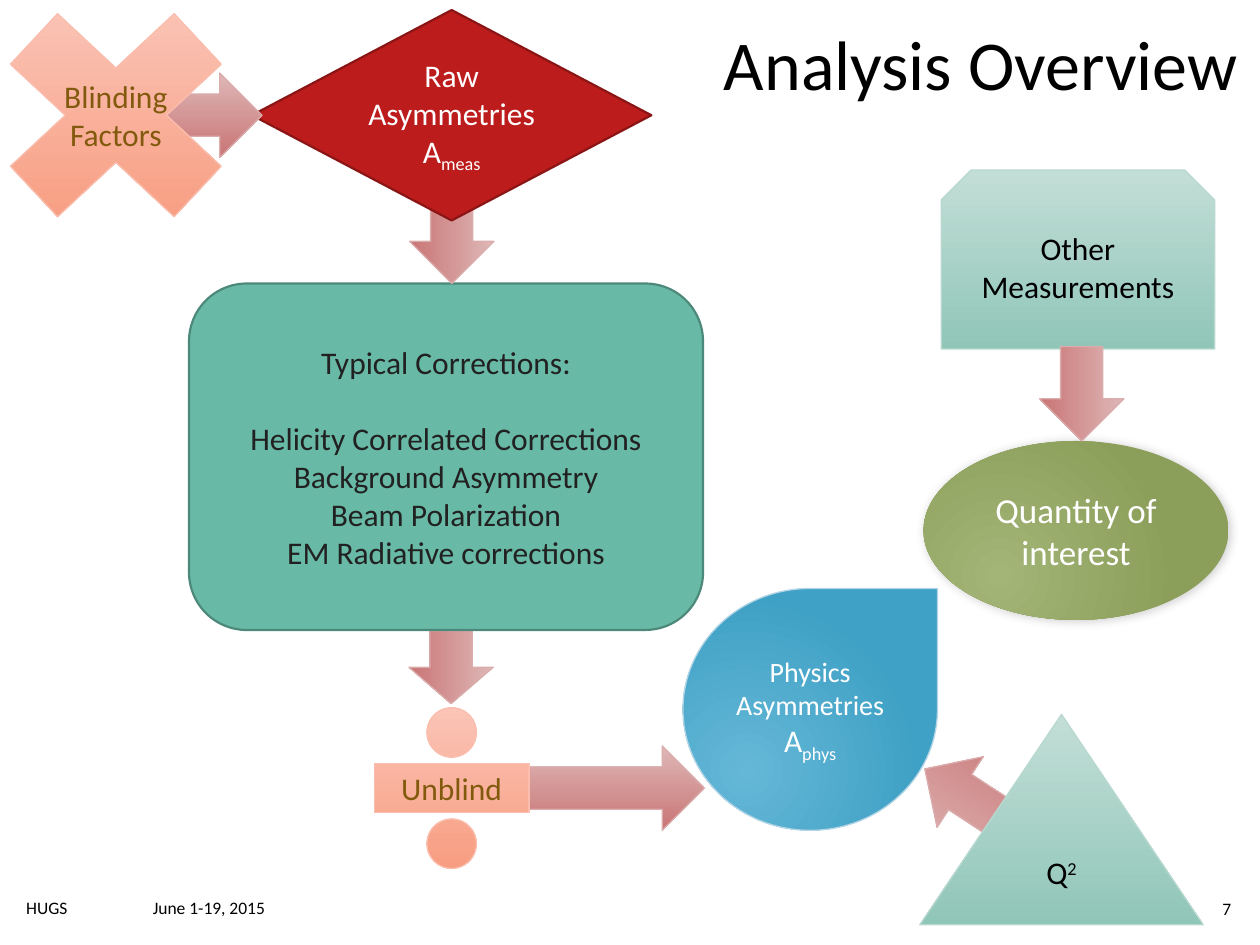
from pptx import Presentation
from pptx.dml.color import RGBColor
from pptx.enum.shapes import MSO_SHAPE as Shape
from pptx.enum.text import MSO_ANCHOR as Anchor, PP_ALIGN as Align
from pptx.oxml import parse_xml
from pptx.oxml.ns import nsdecls, qn
from pptx.util import Inches, Pt


def rgb(value):
    return RGBColor.from_string(value)


def write(box, paras, size, color, align=Align.CENTER):
    """Each paragraph is a list of (text, size or None, baseline) runs."""
    frame = box.text_frame
    frame.word_wrap = True
    frame.vertical_anchor = Anchor.MIDDLE
    for i, runs in enumerate(paras):
        para = frame.paragraphs[0] if i == 0 else frame.add_paragraph()
        para.alignment = align
        for text, own_size, baseline in runs:
            span = para.add_run()
            span.text = text
            span.font.name = "Calibri"
            span.font.size = Pt(own_size or size)
            span.font.color.rgb = rgb(color)
            if baseline:
                span.font._element.set("baseline", str(baseline * 1000))


deck = Presentation()
deck.slide_width, deck.slide_height = Inches(10), Inches(7.5)
page = deck.slides.add_slide(deck.slide_layouts[5])

# Looks: fill colours (two make a gradient), line colour, line width, text colour
ARROW = (["DFB7B7", "C97575"], "DAACAC", 0.75, "000000")
BLIND = (["FBCABE", "F79779"], "FABDAE", 0.75, "825A0E")
INPUT = (["C3DED7", "90C6B8"], "B9D9D0", 0.75, "000000")
RAW = (["BC1C1C"], "8B1515", 1.25, "FFFFFF")
CORRECTIONS = (["68B9A6"], "4D897B", 1.25, "212121")
PHYSICS = (["65B7D7", "3FA1C5"], "B3D5E6", 0.75, "FFFFFF")
QUANTITY = (["A3B577", "8B9E5A"], None, 0, "FFFFFF")
RADIAL = (QUANTITY, PHYSICS)

corrections = ["Typical Corrections:", "Helicity Correlated Corrections",
               "Background Asymmetry", "Beam Polarization", "EM Radiative corrections"]

# Flow parts from back to front: preset, place, rotation, look, text size, paragraphs
parts = [
    (Shape.OVAL, (7.33, 3.5, 2.42, 1.42), 0, QUANTITY, 20,
     [[("Quantity of interest", None, 0)]]),
    (Shape.RIGHT_ARROW, (3.29, 4.96, 0.58, 0.67), 90, ARROW, 18, []),
    (Shape.ROUNDED_RECTANGLE, (1.5, 2.25, 4.08, 2.75), 0, CORRECTIONS, 18,
     [[(line, None, 0)] for line in corrections]),
    (Shape.RIGHT_ARROW, (3.25, 1.58, 0.67, 0.67), 90, ARROW, 18, []),
    (Shape.FLOWCHART_DECISION, (2, 0.08, 3.17, 1.67), 0, RAW, 18,
     [[("Raw Asymmetries", None, 0)], [("A", None, 0), ("meas", None, -25)]]),
    (Shape.RIGHT_ARROW, (1.33, 0.58, 0.75, 0.67), 0, ARROW, 18, []),
    (Shape.MATH_MULTIPLY, (-0.33, -0.25, 2.5, 2.33), 0, BLIND, 18,
     [[("Blinding", None, 0)], [("Factors", None, 0)]]),
    (Shape.SNIP_2_SAME_RECTANGLE, (7.47, 1.35, 2.17, 1.42), 0, INPUT, 18,
     [[("Other Measurements", None, 0)]]),
    (Shape.RIGHT_ARROW, (8.21, 2.79, 0.75, 0.67), 90, ARROW, 18, []),
    (Shape.TEAR, (5.42, 4.67, 2.02, 1.92), 0, PHYSICS, 16,
     [[("Physics Asymmetries", None, 0)], [("A", 18, 0), ("phys", 18, -25)]]),
    (Shape.RIGHT_ARROW, (7.28, 5.97, 0.74, 0.67), 213.2, ARROW, 18, []),
    (Shape.RIGHT_ARROW, (4.17, 5.92, 1.42, 0.67), 0, ARROW, 18, []),
    (Shape.MATH_DIVIDE, (2.75, 5.42, 1.67, 1.67), 0, BLIND, 18,
     [[("Unblind", None, 0)]]),
    (Shape.ISOSCELES_TRIANGLE, (7.3, 5.67, 2.25, 1.67), 0, INPUT, 18,
     [[("Q", None, 0), ("2", None, 30)]]),
]

for preset, place, rotation, look, size, paras in parts:
    colors, line_color, line_width, text_color = look
    part = page.shapes.add_shape(preset, *[Inches(v) for v in place])
    part.rotation = rotation
    part.shadow.inherit = False

    # Fill: plain, top to bottom, or radial from the lower left
    if len(colors) == 1:
        part.fill.solid()
        part.fill.fore_color.rgb = rgb(colors[0])
    else:
        part.fill.gradient()
        part.fill.gradient_angle = 270
        for stop, color, position in zip(part.fill.gradient_stops, colors, (0, 1)):
            stop.color.rgb = rgb(color)
            stop.position = position
    if look in RADIAL:
        linear = part._element.spPr.find(".//" + qn("a:lin"))
        linear.getparent().replace(linear, parse_xml(
            f'<a:path {nsdecls("a")} path="circle">'
            '<a:fillToRect l="50000" t="100000" r="100000" b="50000"/></a:path>'))

    # Outline, or a soft shadow where there is none
    if line_color:
        part.line.color.rgb = rgb(line_color)
        part.line.width = Pt(line_width)
    else:
        part.line.fill.background()
        part._element.spPr.find(qn("a:effectLst")).append(parse_xml(
            f'<a:outerShdw {nsdecls("a")} blurRad="{Pt(6)}" dist="{Pt(1)}" dir="2700000">'
            '<a:srgbClr val="000000"><a:alpha val="20000"/></a:srgbClr></a:outerShdw>'))

    write(part, paras, size, text_color)
    if look is CORRECTIONS:
        part.text_frame.paragraphs[1].space_before = Pt(22)

# Title
title = page.shapes.title
title.left, title.top, title.width, title.height = [Inches(v) for v in (2.25, 0, 7.67, 1)]
write(title, [[("Analysis Overview", None, 0)]], 40, "000000", Align.RIGHT)

# Footer: event, date, page number
for text, place, align in [
    ("HUGS", (0.11, 7, 0.89, 0.4), Align.LEFT),
    ("June 1-19, 2015", (1, 7, 1.2, 0.4), Align.RIGHT),
    ("7", (9.31, 7.01, 0.56, 0.4), Align.RIGHT),
]:
    box = page.shapes.add_textbox(*[Inches(v) for v in place])
    write(box, [[(text, None, 0)]], 10, "000000", align)

deck.save("out.pptx")
